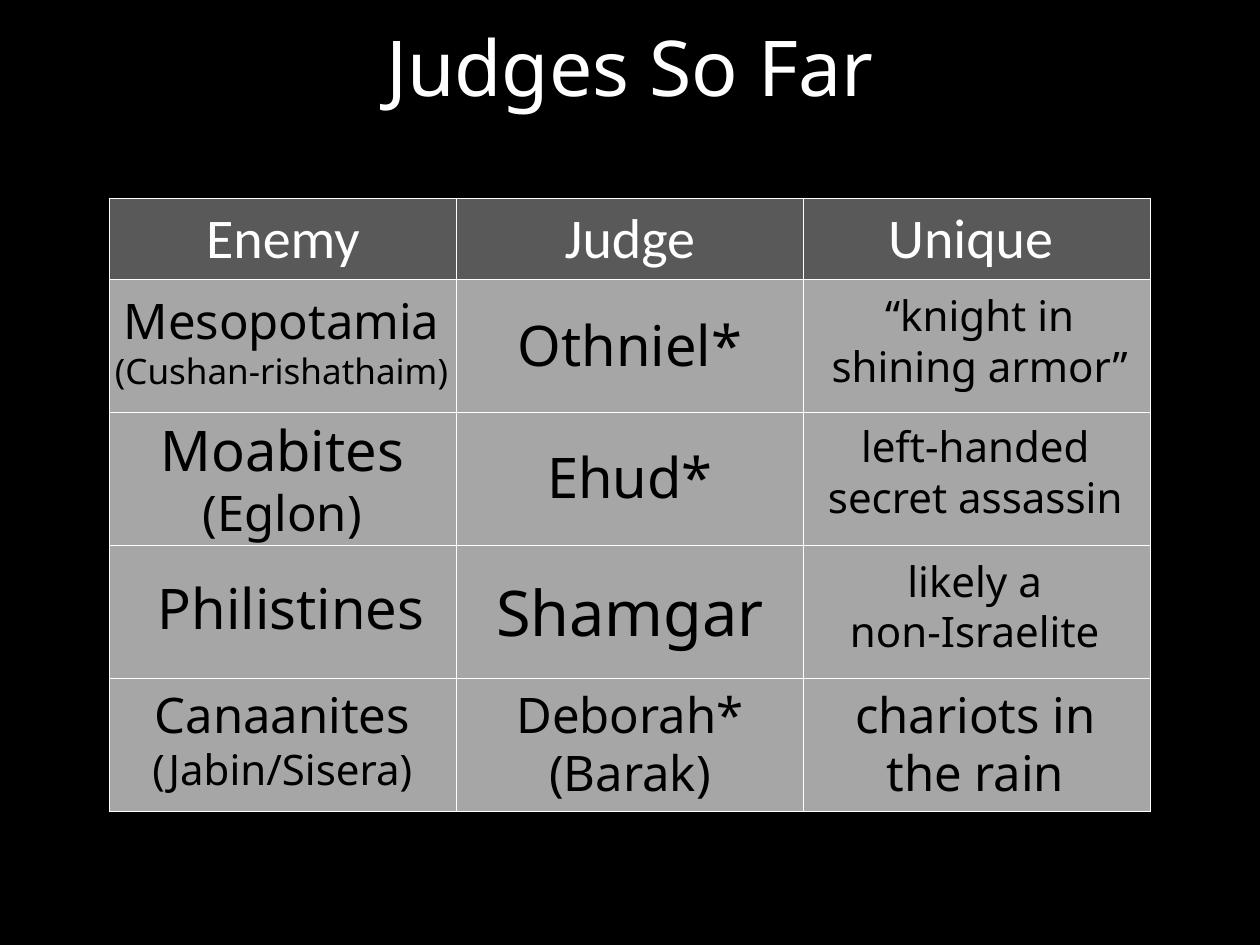
"""Build the slide that lists the judges so far."""
from dataclasses import dataclass

from lxml import etree
from pptx import Presentation
from pptx import util as u
from pptx.dml.color import RGBColor
from pptx.enum import text
from pptx.oxml import ns

BLACK = RGBColor(0x00, 0x00, 0x00)
WHITE = RGBColor(0xFF, 0xFF, 0xFF)
DARK = RGBColor(0x59, 0x59, 0x59)
GREY = RGBColor(0xA6, 0xA6, 0xA6)
SANS = "Noto Sans"
HEADS = ("Enemy", "Judge", "Unique ")
COLS, ROWS = 3, 5


@dataclass(frozen=True)
class Line:
    words: str
    size: int


@dataclass(frozen=True)
class Label:
    left: float
    top: float
    width: float
    height: float
    lines: tuple[Line, ...]


TITLE = Label(49.7, 11.5, 620.6, 59, (Line("Judges So Far", 44),))
LABELS = (
    Label(269.3, 324, 181.4, 51.1, (Line("Shamgar", 36),)),
    Label(75.6, 324, 181.4, 46.1, (Line("Philistines", 32),)),
    Label(469.4, 313.9, 181.4, 65.5, (Line("likely a ", 24), Line("non-Israelite ", 24))),
    Label(269.3, 174.2, 181.4, 46.1, (Line("Othniel*", 32),)),
    Label(53.3, 162.7, 215.3, 65.5, (Line("Mesopotamia", 28), Line("(Cushan-rishathaim)", 20))),
    Label(465.1, 162, 189.4, 65.5, (Line("“knight in shining armor”", 24),)),
    Label(269.3, 249.1, 181.4, 46.1, (Line("Ehud*", 32),)),
    Label(70.6, 234, 181.4, 79.9, (Line("Moabites", 32), Line("(Eglon)", 28))),
    Label(460.1, 236.9, 194.4, 65.5, (Line("left-handed secret assassin", 24),)),
    Label(269.3, 387.4, 181.4, 74.9, (Line("Deborah* (Barak)", 28),)),
    Label(70.6, 387.4, 181.4, 70.6, (Line("Canaanites", 28), Line("(Jabin/Sisera)", 24))),
    Label(466.6, 387.4, 181.4, 74.9, (Line("chariots in the rain", 28),)),
)


def write(para, line: Line, face: str, color: RGBColor) -> None:
    para.alignment = text.PP_ALIGN.CENTER
    run = para.add_run()
    run.text = line.words
    run.font.name = face
    run.font.size = u.Pt(line.size)
    run.font.bold = False
    run.font.color.rgb = color


def draw_label(slide, label: Label, color: RGBColor):
    box = slide.shapes.add_textbox(
        u.Pt(label.left), u.Pt(label.top), u.Pt(label.width), u.Pt(label.height))
    frame = box.text_frame
    frame.word_wrap = True
    frame.auto_size = text.MSO_AUTO_SIZE.SHAPE_TO_FIT_TEXT
    for i, line in enumerate(label.lines):
        para = frame.add_paragraph() if i else frame.paragraphs[0]
        write(para, line, SANS, color)
    return frame


def draw_title(slide) -> None:
    frame = draw_label(slide, TITLE, WHITE)
    frame.auto_size = text.MSO_AUTO_SIZE.NONE
    frame.vertical_anchor = text.MSO_ANCHOR.MIDDLE
    frame.paragraphs[0].line_spacing = 0.9


def edge(cell, color: RGBColor) -> None:
    props = cell._tc.get_or_add_tcPr()
    for i, side in enumerate("LRTB"):
        line = etree.Element(ns.qn(f"a:ln{side}"), w=str(u.Pt(1)))
        fill = etree.SubElement(line, ns.qn("a:solidFill"))
        etree.SubElement(fill, ns.qn("a:srgbClr"), val=str(color))
        props.insert(i, line)


def draw_table(slide) -> None:
    grid = slide.shapes.add_table(
        ROWS, COLS, u.Pt(62.6), u.Pt(113.4), u.Pt(594.9), u.Pt(350.3)).table
    grid.first_row = False
    grid.horz_banding = False
    for col in grid.columns:
        col.width = u.Pt(198.3)
    for i, row in enumerate(grid.rows):
        row.height = u.Pt(76 if i else 46.3)
        for cell in row.cells:
            cell.fill.solid()
            cell.fill.fore_color.rgb = GREY if i else DARK
            edge(cell, WHITE)
    for cell, head in zip(grid.rows[0].cells, HEADS):
        cell.vertical_anchor = text.MSO_ANCHOR.MIDDLE
        write(cell.text_frame.paragraphs[0], Line(head, 32), "Calibri", WHITE)


def main() -> None:
    deck = Presentation()
    deck.slide_width, deck.slide_height = u.Pt(720), u.Pt(540)
    slide = deck.slides.add_slide(deck.slide_layouts[6])
    slide.background.fill.solid()
    slide.background.fill.fore_color.rgb = BLACK
    draw_title(slide)
    draw_table(slide)
    for label in LABELS:
        draw_label(slide, label, BLACK)
    deck.save("out.pptx")


if __name__ == "__main__":
    main()
